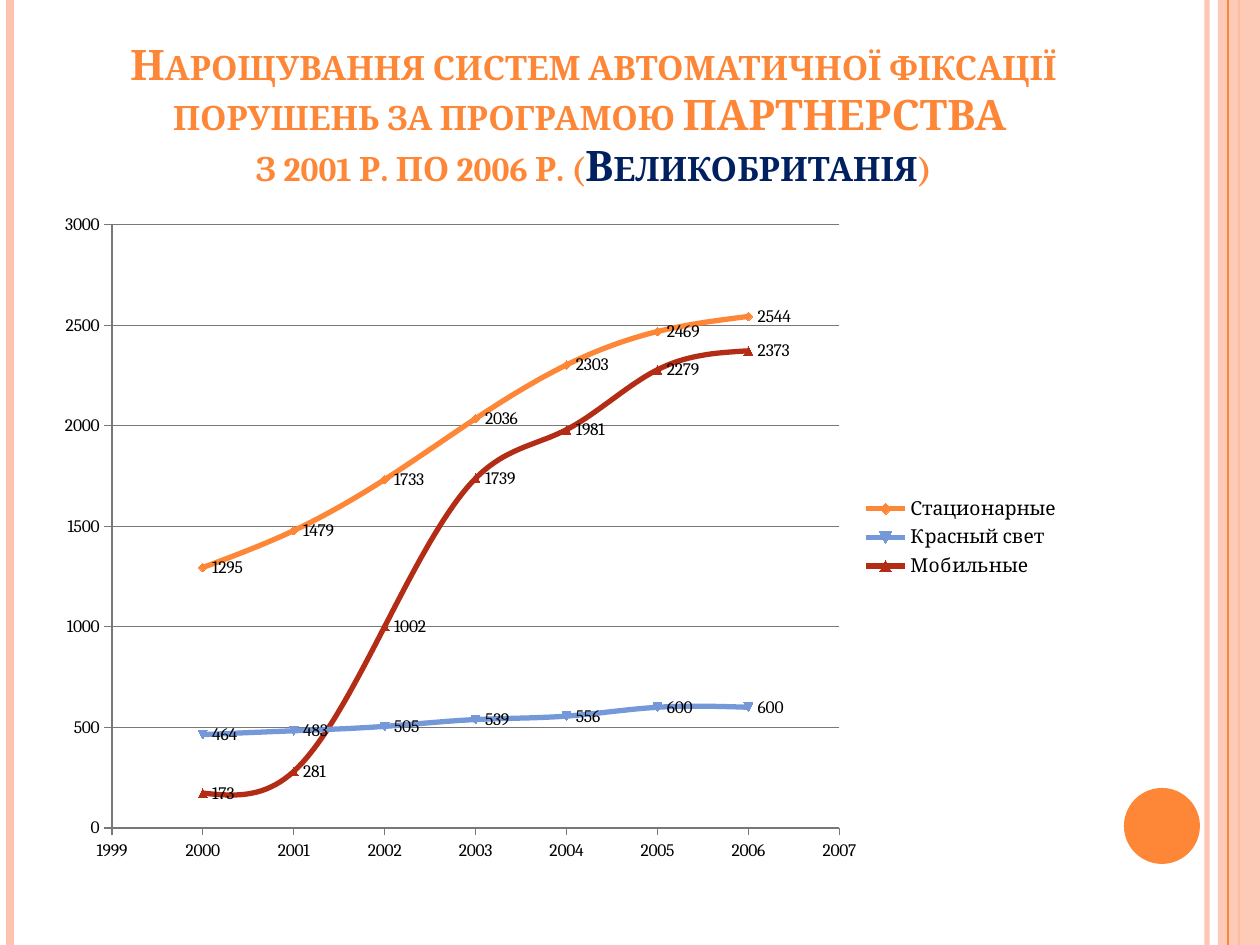
import pptx
import pptx.util
import pptx.chart.data
import pptx.chart.datalabel
from pptx.dml.color import RGBColor
from pptx.enum.chart import XL_CHART_TYPE, XL_LABEL_POSITION, XL_LEGEND_POSITION, XL_TICK_MARK
from pptx.enum.shapes import MSO_CONNECTOR, MSO_SHAPE
from pptx.enum.text import MSO_ANCHOR, PP_ALIGN
from pptx.oxml import parse_xml
from pptx.oxml.ns import nsdecls, qn

ORANGE = RGBColor(0xFE, 0x86, 0x37)
PEACH = RGBColor(0xFE, 0xC3, 0xAE)
BLUE = RGBColor(0x75, 0x98, 0xD9)
RED = RGBColor(0xB3, 0x2C, 0x16)
NAVY = RGBColor(0x00, 0x20, 0x60)
GRAY = RGBColor(0x78, 0x78, 0x78)
BLACK = RGBColor(0, 0, 0)
FONT = "Cambria"

# Content
TITLE_LINES = [
    [("Нарощування систем автоматичної фіксації порушень за програмою ПАРТНЕРСТВА ", ORANGE)],
    [("з 2001 р. по 2006 р. (", ORANGE), ("Великобританія", NAVY), (")", ORANGE)],
]
YEARS = range(2000, 2007)
SERIES = [
    ("Стационарные", ORANGE, (1295, 1479, 1733, 2036, 2303, 2469, 2544)),
    ("Красный свет", BLUE, (464, 483, 505, 539, 556, 600, 600)),
    ("Мобильные", RED, (173, 281, 1002, 1739, 1981, 2279, 2373)),
]

# Places in px: left, top, width, height
SLIDE = (1260, 945)
TITLE_BOX = (44, 37, 1099, 159)
CHART_BOX = (44, 202, 1029, 671)
PLOT_BOX = (112, 225, 727, 603)
BAND_BOX = (1218, 0, 42, 945)
CIRCLE_BOX = (1124, 788, 76, 76)
# x, colour, width in pt, opacity in percent
STRIPES_BELOW = [(1207, PEACH, 3, 93), (10, PEACH, 4.5, 100), (1239, ORANGE, 1.5, 100)]
STRIPE_ABOVE = (1228, ORANGE, 0.75, 100)


def px(n):
    return pptx.util.Emu(round(n * 914400 / 126))


def set_opacity(fill, percent):
    if percent < 100:
        color = fill._xPr.find(qn("a:solidFill"))[0]
        color.append(parse_xml(f'<a:alpha {nsdecls("a")} val="{percent * 1000}"/>'))


def add_stripe(slide, x, color, width, opacity):
    stripe = slide.shapes.add_connector(MSO_CONNECTOR.STRAIGHT, px(x), 0, px(x), px(SLIDE[1]))
    stripe.line.color.rgb = color
    stripe.line.width = pptx.util.Pt(width)
    set_opacity(stripe.line.fill, opacity)
    stripe._element.spPr.append(parse_xml(f'<a:effectLst {nsdecls("a")}/>'))


def add_solid(slide, preset, box, color, opacity=100):
    solid = slide.shapes.add_shape(preset, *map(px, box))
    solid.shadow.inherit = False
    solid.fill.solid()
    solid.fill.fore_color.rgb = color
    set_opacity(solid.fill, opacity)
    solid.line.fill.background()


def fill_title(title):
    title.left, title.top, title.width, title.height = map(px, TITLE_BOX)
    frame = title.text_frame
    frame.word_wrap = True
    frame.vertical_anchor = MSO_ANCHOR.BOTTOM
    paragraph = frame.paragraphs[0]
    paragraph.alignment = PP_ALIGN.CENTER
    paragraph.line_spacing = 1.0
    for number, line in enumerate(TITLE_LINES):
        if number:
            paragraph.add_line_break()
        for text, color in line:
            run = paragraph.add_run()
            run.text = text
            run.font.name = FONT
            run.font.size = pptx.util.Pt(24)
            run.font.bold = True
            run.font.color.rgb = color
            run.font._element.set("cap", "small")


def style_axis(axis, low, high, step):
    axis.minimum_scale, axis.maximum_scale, axis.major_unit = low, high, step
    axis.major_tick_mark = XL_TICK_MARK.OUTSIDE
    axis.minor_tick_mark = XL_TICK_MARK.NONE
    axis.tick_labels.number_format = "General"
    axis.tick_labels.number_format_is_linked = False
    axis.format.line.color.rgb = GRAY
    axis.format.line.width = pptx.util.Pt(0.75)


def place_plot(chart):
    left, top, width, height = CHART_BOX
    x, y, w, h = PLOT_BOX
    shares = {"x": (x - left) / width, "y": (y - top) / height, "w": w / width, "h": h / height}
    parts = "".join(f'<c:{key} val="{share:.3f}"/>' for key, share in shares.items())
    plot_area = chart._chartSpace.chart.plotArea
    for old in plot_area.findall(qn("c:layout")):
        plot_area.remove(old)
    plot_area.insert(0, parse_xml(
        f'<c:layout {nsdecls("c")}><c:manualLayout><c:layoutTarget val="inner"/>'
        f'<c:xMode val="edge"/><c:yMode val="edge"/>{parts}</c:manualLayout></c:layout>'))


def add_growth_chart(slide):
    data = pptx.chart.data.XyChartData()
    for name, _, values in SERIES:
        series = data.add_series(name)
        for year, value in zip(YEARS, values):
            series.add_data_point(year, value)
    chart = slide.shapes.add_chart(
        XL_CHART_TYPE.XY_SCATTER_SMOOTH, *map(px, CHART_BOX), data).chart
    chart.has_title = False
    chart.font.name = FONT
    chart.font.size = pptx.util.Pt(10)
    chart.font.color.rgb = BLACK

    # Axes and grid
    style_axis(chart.category_axis, 1999, 2007, 1)
    style_axis(chart.value_axis, 0, 3000, 500)
    chart.category_axis.has_major_gridlines = False
    chart.value_axis.has_major_gridlines = True
    grid = chart.value_axis.major_gridlines.format.line
    grid.color.rgb = GRAY
    grid.width = pptx.util.Pt(0.75)
    place_plot(chart)

    # Legend
    chart.has_legend = True
    chart.legend.position = XL_LEGEND_POSITION.RIGHT
    chart.legend.include_in_layout = False
    chart.legend.font.name = FONT
    chart.legend.font.size = pptx.util.Pt(11)
    chart.legend.font.color.rgb = BLACK

    # Curves and their values
    plot = chart.plots[0]
    plot.vary_by_categories = False
    for series, (_, color, _) in zip(plot.series, SERIES):
        series.format.line.color.rgb = color
        series.format.line.width = pptx.util.Pt(3)
        series._element.get_or_add_smooth().val = True
        series.marker.size = 5
        series.marker.format.fill.solid()
        series.marker.format.fill.fore_color.rgb = color
        series.marker.format.line.color.rgb = color
        labels = pptx.chart.datalabel.DataLabels(series._element.get_or_add_dLbls())
        labels.show_value = True
        labels.position = XL_LABEL_POSITION.RIGHT


def main():
    deck = pptx.Presentation()
    deck.slide_width, deck.slide_height = map(px, SLIDE)
    slide = deck.slides.add_slide(deck.slide_layouts[5])

    # Side stripes and circle
    for stripe in STRIPES_BELOW:
        add_stripe(slide, *stripe)
    add_solid(slide, MSO_SHAPE.RECTANGLE, BAND_BOX, PEACH, 87)
    add_stripe(slide, *STRIPE_ABOVE)
    add_solid(slide, MSO_SHAPE.OVAL, CIRCLE_BOX, ORANGE)

    fill_title(slide.shapes.title)
    add_growth_chart(slide)
    deck.save("out.pptx")


if __name__ == "__main__":
    main()
